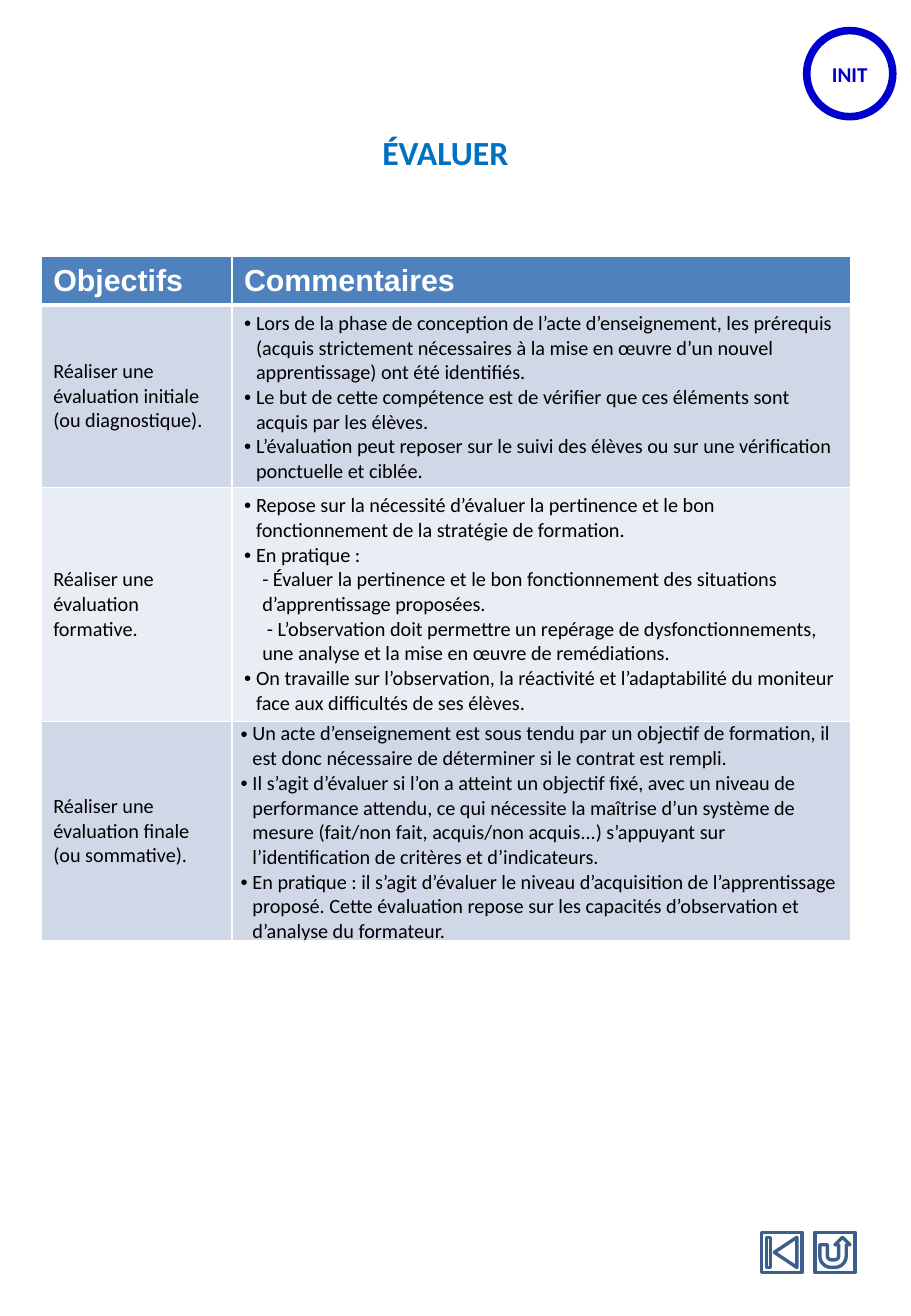
from lxml import etree
from pptx import Presentation
from pptx.dml.color import RGBColor
from pptx.enum import shapes, text
from pptx.oxml import ns
from pptx.util import Cm, Pt

WHITE = RGBColor(0xFF, 0xFF, 0xFF)
BLACK = RGBColor(0, 0, 0)
INK = RGBColor(0, 0, 0xCC)
TITLE = RGBColor(0, 0x70, 0xC0)
STEEL = RGBColor(0x3A, 0x5F, 0x8C)
HEAD = RGBColor(0x4F, 0x81, 0xBD)
DARK = RGBColor(0xD0, 0xD8, 0xE8)
LIGHT = RGBColor(0xE9, 0xED, 0xF4)

WIDTHS = [3.99, 12.93]
HEIGHTS = [0.99, 3.73, 4.9, 4.27]
GOALS = [
    ("Réaliser une évaluation initiale (ou diagnostique).", [
        "Lors de la phase de conception de l’acte d’enseignement, les prérequis (acquis strictement nécessaires à la mise en œuvre d’un nouvel apprentissage) ont été identifiés.",
        "Le but de cette compétence est de vérifier que ces éléments sont acquis par les élèves.",
        "L’évaluation peut reposer sur le suivi des élèves ou sur une vérification ponctuelle et ciblée.",
    ]),
    ("Réaliser une évaluation formative.", [
        "Repose sur la nécessité d’évaluer la pertinence et le bon fonctionnement de la stratégie de formation.",
        "En pratique :",
        "- Évaluer la pertinence et le bon fonctionnement des situations d’apprentissage proposées.",
        " - L’observation doit permettre un repérage de dysfonctionnements, une analyse et la mise en œuvre de remédiations.",
        "On travaille sur l’observation, la réactivité et l’adaptabilité du moniteur face aux difficultés de ses élèves.",
    ]),
    ("Réaliser une évaluation finale (ou sommative).", [
        "Un acte d’enseignement est sous tendu par un objectif de formation, il est donc nécessaire de déterminer si le contrat est rempli.",
        "Il s’agit d’évaluer si l’on a atteint un objectif fixé, avec un niveau de performance attendu, ce qui nécessite la maîtrise d’un système de mesure (fait/non fait, acquis/non acquis...) s’appuyant sur l’identification de critères et d’indicateurs.",
        "En pratique : il s’agit d’évaluer le niveau d’acquisition de l’apprentissage proposé. Cette évaluation repose sur les capacités d’observation et d’analyse du formateur.",
    ]),
]


def style(para, size, color, bold=False, face="Calibri"):
    for run in para.runs:
        font = run.font
        font.name, font.size, font.bold = face, Pt(size), bold
        font.color.rgb = color


def indent(para):
    props = para._p.get_or_add_pPr()
    if para.text.strip().startswith("-"):
        props.set("marL", str(Cm(0.38)))
        return
    props.set("marL", str(Cm(0.25)))
    props.set("indent", str(-Cm(0.25)))
    face = etree.SubElement(props, ns.qn("a:buFont"))
    face.set("typeface", "Arial")
    etree.SubElement(props, ns.qn("a:buChar")).set("char", "•")


def border(cell, base):
    props = cell._tc.get_or_add_tcPr()
    for side, width in zip("LRTB", (1, 1, 1, base)):
        line = etree.SubElement(props, ns.qn("a:ln" + side))
        line.set("w", str(Pt(width)))
        fill = etree.SubElement(line, ns.qn("a:solidFill"))
        etree.SubElement(fill, ns.qn("a:srgbClr")).set("val", str(WHITE))


def write(cell, lines, fill, base=1):
    border(cell, base)
    cell.fill.solid()
    cell.fill.fore_color.rgb = fill
    cell.vertical_anchor = text.MSO_ANCHOR.MIDDLE
    cell.text_frame.text = "\n".join(lines)
    return cell.text_frame.paragraphs


def add_grid(slide):
    frame = slide.shapes.add_table(
        len(HEIGHTS), len(WIDTHS), Cm(0.86), Cm(5.36), Cm(sum(WIDTHS)), Cm(sum(HEIGHTS)))
    grid = frame.table
    for col, width in zip(grid.columns, WIDTHS):
        col.width = Cm(width)
    for row, height in zip(grid.rows, HEIGHTS):
        row.height = Cm(height)
    for col, label in enumerate(["Objectifs", "Commentaires"]):
        for para in write(grid.cell(0, col), [label], HEAD, 3):
            style(para, 18, WHITE, True, "Arial")
    for row, (goal, notes) in enumerate(GOALS, 1):
        fill = DARK if row % 2 else LIGHT
        for para in write(grid.cell(row, 0), [goal], fill):
            style(para, 12, BLACK)
        for para in write(grid.cell(row, 1), notes, fill):
            indent(para)
            style(para, 12, BLACK)
    last = grid.cell(len(GOALS), 1)
    last.vertical_anchor = text.MSO_ANCHOR.TOP
    last.margin_left = last.margin_right = Cm(0.18)
    last.margin_top = last.margin_bottom = 0


def add_mark(slide, kind, left, top, size, color, width):
    mark = slide.shapes.add_shape(kind, Cm(left), Cm(top), Cm(size), Cm(size))
    mark.shadow.inherit = False
    mark.fill.background()
    mark.line.color.rgb = color
    mark.line.width = Pt(width)
    return mark


def add_badge(slide):
    badge = add_mark(slide, shapes.MSO_SHAPE.OVAL, 16.87, 0.64, 1.8, INK, 4.5)
    badge.fill.solid()
    badge.fill.fore_color.rgb = WHITE
    frame = badge.text_frame
    frame.margin_left = frame.margin_right = 0
    frame.vertical_anchor = text.MSO_ANCHOR.MIDDLE
    frame.text = "INIT"
    para = frame.paragraphs[0]
    para.alignment = text.PP_ALIGN.CENTER
    style(para, 12.5, INK, True)


def add_title(slide):
    box = slide.shapes.add_textbox(Cm(2.84), Cm(2.64), Cm(12.95), Cm(1.12))
    frame = box.text_frame
    frame.word_wrap = True
    frame.text = "ÉVALUER"
    para = frame.paragraphs[0]
    para.alignment = text.PP_ALIGN.CENTER
    style(para, 20, TITLE, True)


def main():
    deck = Presentation()
    deck.slide_width, deck.slide_height = Cm(19.05), Cm(27.51)
    slide = deck.slides.add_slide(deck.slide_layouts[6])
    add_badge(slide)
    add_title(slide)
    add_grid(slide)
    kinds = shapes.MSO_SHAPE
    for kind, left in [(kinds.ACTION_BUTTON_BEGINNING, 15.93),
                       (kinds.ACTION_BUTTON_RETURN, 17.04)]:
        add_mark(slide, kind, left, 25.76, 0.84, STEEL, 2)
    deck.save("out.pptx")


if __name__ == "__main__":
    main()
